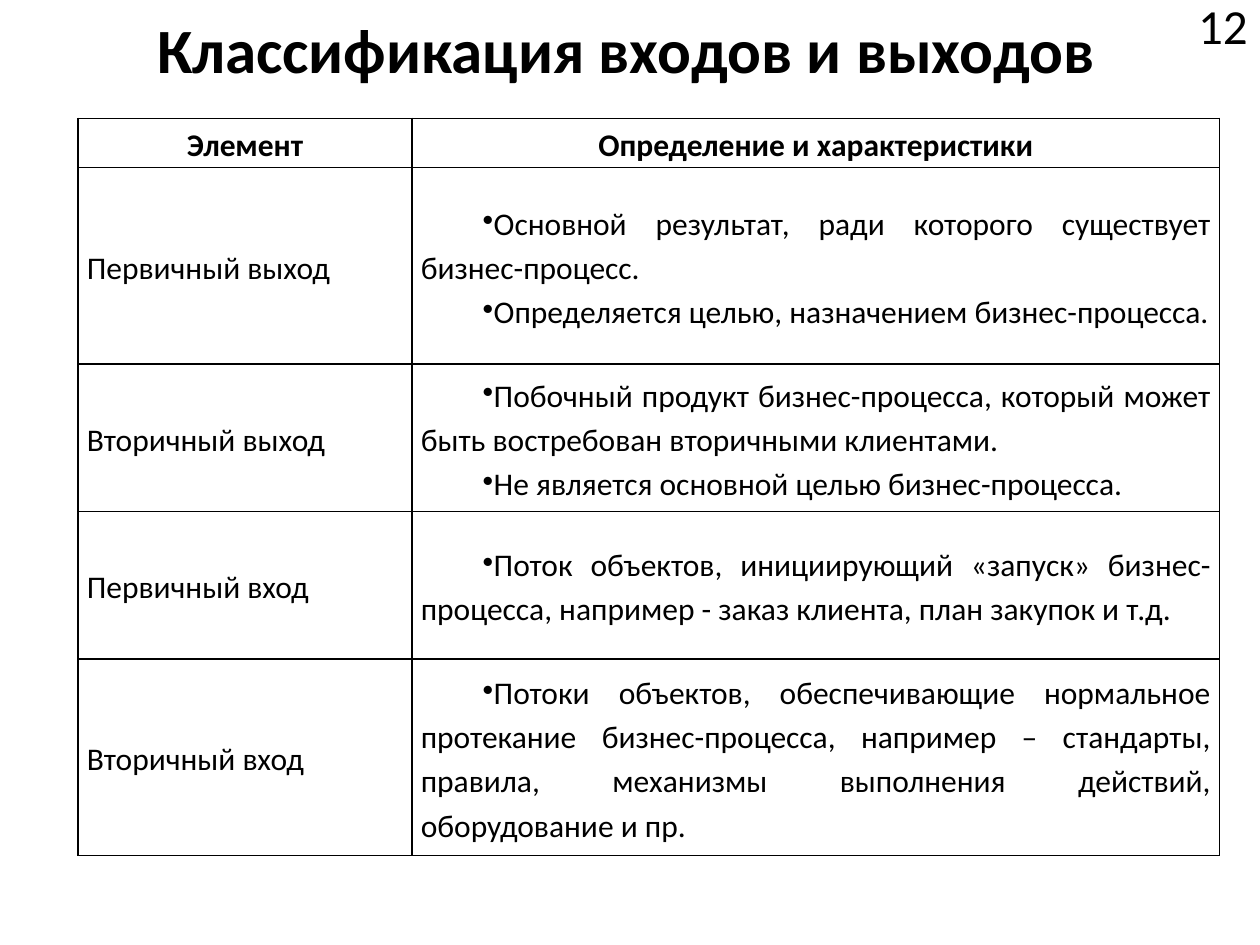
from dataclasses import dataclass

from lxml import etree
from pptx import Presentation
from pptx import util as u
from pptx.dml.color import RGBColor
from pptx.enum import text
from pptx.oxml import ns

BLACK = RGBColor(0, 0, 0)
FONT = "Calibri"
HEADS = ("Элемент", "Определение и характеристики")
WIDTHS = (2.65, 6.41)
HEAD_HIGH = 0.39


@dataclass
class Row:
    name: str
    points: tuple[str, ...]
    high: float


ROWS = (
    Row("Первичный выход", (
        "Основной результат, ради которого существует бизнес-процесс.",
        "Определяется целью, назначением бизнес-процесса.",
    ), 1.56),
    Row("Вторичный выход", (
        "Побочный продукт бизнес-процесса, который может быть востребован "
        "вторичными клиентами.",
        "Не является основной целью бизнес-процесса.",
    ), 1.17),
    Row("Первичный вход", (
        "Поток объектов, инициирующий «запуск» бизнес-процесса, например - "
        "заказ клиента, план закупок и т.д.",
    ), 1.17),
    Row("Вторичный вход", (
        "Потоки объектов, обеспечивающие нормальное протекание "
        "бизнес-процесса, например – стандарты, правила, механизмы "
        "выполнения действий, оборудование и пр.",
    ), 1.56),
)


def style(para, size: float, align, bold: bool = False) -> None:
    para.alignment = align
    font = para.font
    font.name, font.size, font.bold = FONT, u.Pt(size), bold
    font.color.rgb = BLACK


def add_bullet(para) -> None:
    """Indent the first line and start it with a bullet."""
    props = para._p.get_or_add_pPr()
    props.set("marL", "0")
    props.set("indent", str(u.Inches(0.49)))
    mark = etree.Element(ns.qn("a:buChar"), char="•")
    props.insert_element_before(mark, "a:tabLst", "a:defRPr", "a:extLst")


def add_border(cell) -> None:
    props = cell._tc.get_or_add_tcPr()
    for spot, side in enumerate(("lnL", "lnR", "lnT", "lnB")):
        line = etree.Element(ns.qn(f"a:{side}"), w=str(u.Pt(1)))
        fill = etree.SubElement(line, ns.qn("a:solidFill"))
        etree.SubElement(fill, ns.qn("a:srgbClr"), val=str(BLACK))
        props.insert(spot, line)


def fill_cell(cell, lines: tuple[str, ...], head: bool = False,
              bullet: bool = False) -> None:
    cell.fill.background()
    add_border(cell)
    cell.margin_left = cell.margin_right = u.Inches(0.07)
    cell.margin_top = cell.margin_bottom = 0
    cell.vertical_anchor = text.MSO_ANCHOR.MIDDLE
    cell.text = "\n".join(lines)
    align = text.PP_ALIGN.CENTER if head else text.PP_ALIGN.JUSTIFY
    for para in cell.text_frame.paragraphs:
        style(para, 18, align, head)
        para.line_spacing = 1.15
        if bullet:
            add_bullet(para)


def add_title(slide) -> None:
    title = slide.shapes.title
    title.left, title.top = u.Inches(0.47), 0
    title.width, title.height = u.Inches(9), u.Inches(0.94)
    frame = title.text_frame
    frame.text = "Классификация входов и выходов"
    frame.vertical_anchor = text.MSO_ANCHOR.TOP
    frame.margin_top = u.Inches(0.08)
    style(frame.paragraphs[0], 36, text.PP_ALIGN.CENTER, True)


def add_number(slide) -> None:
    box = slide.shapes.add_textbox(
        u.Inches(8.98), 0, u.Inches(1.02), u.Inches(0.39))
    frame = box.text_frame
    frame.word_wrap = True
    frame.vertical_anchor = text.MSO_ANCHOR.MIDDLE
    frame.text = "12"
    style(frame.paragraphs[0], 28, text.PP_ALIGN.RIGHT)


def add_grid(slide) -> None:
    highs = [HEAD_HIGH] + [row.high for row in ROWS]
    grid = slide.shapes.add_table(
        len(highs), len(WIDTHS), u.Inches(0.62), u.Inches(0.94),
        u.Inches(sum(WIDTHS)), u.Inches(sum(highs))).table
    grid.first_row = grid.horz_banding = False
    for col, wide in zip(grid.columns, WIDTHS):
        col.width = u.Inches(wide)
    for line, high in zip(grid.rows, highs):
        line.height = u.Inches(high)
    for col, head in enumerate(HEADS):
        fill_cell(grid.cell(0, col), (head,), head=True)
    for num, row in enumerate(ROWS, 1):
        fill_cell(grid.cell(num, 0), (row.name,))
        fill_cell(grid.cell(num, 1), row.points, bullet=True)


def main() -> None:
    deck = Presentation()
    deck.slide_width, deck.slide_height = u.Inches(10), u.Inches(7.5)
    slide = deck.slides.add_slide(deck.slide_layouts.get_by_name("Title Only"))
    add_title(slide)
    add_number(slide)
    add_grid(slide)
    deck.save("out.pptx")


if __name__ == "__main__":
    main()
